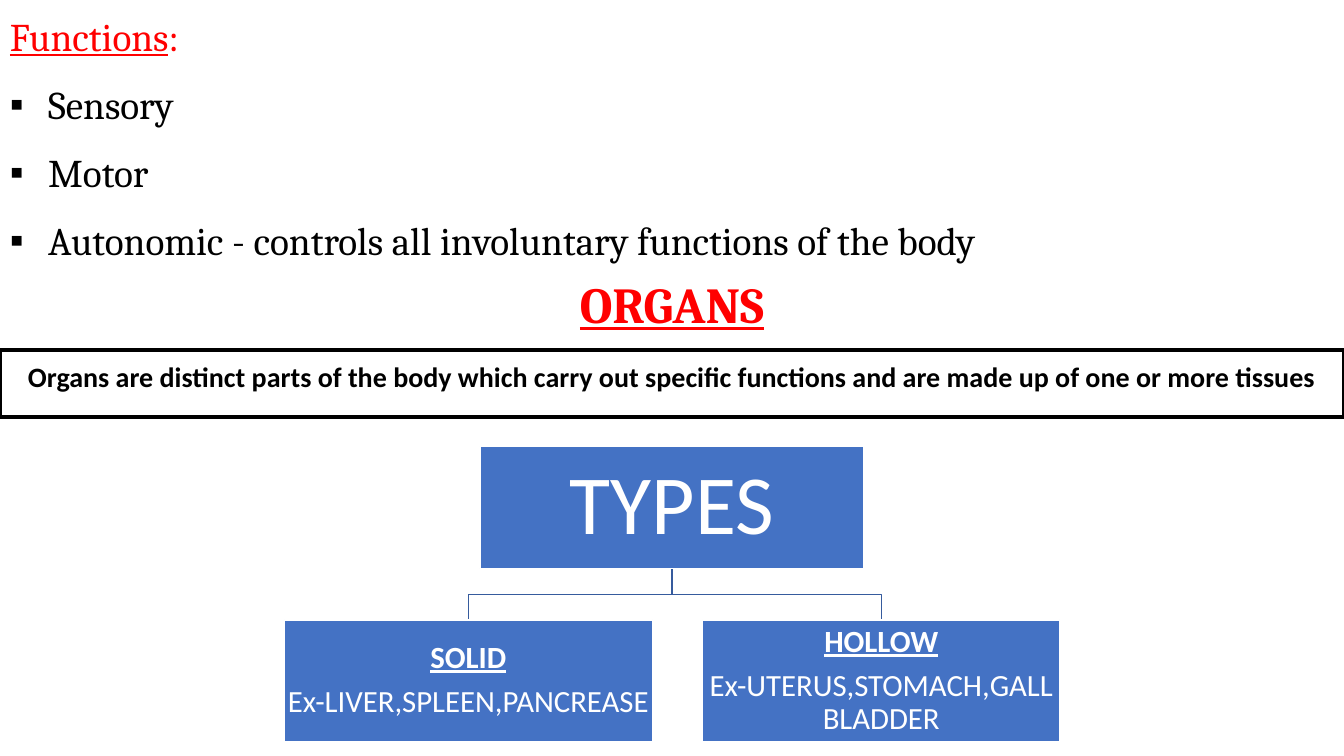
import dataclasses
import typing

import pptx
import pptx.dml.color
import pptx.enum.shapes
import pptx.enum.text
import pptx.oxml
import pptx.oxml.ns
import pptx.util

SLIDE_WIDTH = pptx.util.Inches(13.33)
SLIDE_HEIGHT = pptx.util.Inches(7.5)
BLACK, WHITE, RED, BLUE, DARK_BLUE = "000000", "FFFFFF", "FF0000", "4472C4", "365B9D"
CENTER = pptx.enum.text.PP_ALIGN.CENTER
BULLET_INDENT = pptx.util.Inches(0.38)


@dataclasses.dataclass(frozen=True)
class Area:
    """A rectangle in percent of the slide's width and height."""
    left: float
    top: float
    width: float
    height: float

    def place(self) -> tuple[int, int, int, int]:
        return (across(self.left), down(self.top), across(self.width), down(self.height))

    @property
    def middle(self) -> float:
        return self.left + self.width / 2

    @property
    def bottom(self) -> float:
        return self.top + self.height


@dataclasses.dataclass(frozen=True)
class Line:
    """One paragraph and its look."""
    text: str
    size: float
    font: str
    color: str
    bold: bool = False
    underline: bool = False
    spacing: float = 1.15
    after: float = 10
    centered: bool = True
    bullet: bool = False
    tab: bool = False


@dataclasses.dataclass(frozen=True)
class Box:
    """A filled box of the types chart."""
    area: Area
    inset: float
    lines: tuple[Line, ...]


def across(share: float) -> int:
    return round(SLIDE_WIDTH * share / 100)


def down(share: float) -> int:
    return round(SLIDE_HEIGHT * share / 100)


def rgb(color: str) -> pptx.dml.color.RGBColor:
    return pptx.dml.color.RGBColor.from_string(color)


def add_bullet(paragraph: typing.Any, tab: bool) -> None:
    properties = paragraph._p.get_or_add_pPr()
    properties.set("marL", str(BULLET_INDENT))
    properties.set("indent", str(-BULLET_INDENT))
    namespace = pptx.oxml.ns.nsdecls("a")
    elements = [f'<a:buFont {namespace} typeface="Arial"/>', f'<a:buChar {namespace} char="▪"/>']
    if tab:
        elements.append(f'<a:tabLst {namespace}><a:tab pos="{pptx.util.Inches(1)}" algn="l"/></a:tabLst>')
    for element in elements:
        properties.append(pptx.oxml.parse_xml(element))


def write_lines(frame: typing.Any, lines: typing.Sequence[Line]) -> None:
    frame.word_wrap = True
    for index, line in enumerate(lines):
        paragraph = frame.add_paragraph() if index else frame.paragraphs[0]
        if line.bullet:
            add_bullet(paragraph, line.tab)
        paragraph.text = line.text
        paragraph.alignment = CENTER if line.centered else pptx.enum.text.PP_ALIGN.LEFT
        paragraph.line_spacing = line.spacing
        paragraph.space_after = pptx.util.Pt(line.after)
        font = paragraph.font
        font.name, font.size = line.font, pptx.util.Pt(line.size)
        font.bold, font.underline = line.bold, line.underline
        font.color.rgb = rgb(line.color)


def add_text(slide: typing.Any, area: Area, lines: typing.Sequence[Line]) -> typing.Any:
    frame = slide.shapes.add_textbox(*area.place()).text_frame
    write_lines(frame, lines)
    frame.auto_size = pptx.enum.text.MSO_AUTO_SIZE.SHAPE_TO_FIT_TEXT
    return frame


def add_rectangle(slide: typing.Any, area: Area, fill: str, outline: str, weight: float,
                  lines: typing.Sequence[Line]) -> typing.Any:
    shape = slide.shapes.add_shape(pptx.enum.shapes.MSO_SHAPE.RECTANGLE, *area.place())
    shape.shadow.inherit = False
    shape.fill.solid()
    shape.fill.fore_color.rgb = rgb(fill)
    shape.line.color.rgb = rgb(outline)
    shape.line.width = pptx.util.Pt(weight)
    write_lines(shape.text_frame, lines)
    return shape.text_frame


def add_box(slide: typing.Any, box: Box) -> None:
    frame = add_rectangle(slide, box.area, BLUE, WHITE, 1, box.lines)
    frame.vertical_anchor = pptx.enum.text.MSO_ANCHOR.MIDDLE
    inset = pptx.util.Inches(box.inset)
    frame.margin_left = frame.margin_top = frame.margin_right = frame.margin_bottom = inset


def add_branch(slide: typing.Any, parent: Area, child: Area) -> None:
    """Draw an elbow from the foot of the parent to the head of the child."""
    halfway = down((parent.bottom + child.top) / 2)
    start, end = across(parent.middle), across(child.middle)
    builder = slide.shapes.build_freeform(start, down(parent.bottom))
    builder.add_line_segments([(start, halfway), (end, halfway), (end, down(child.top))], close=False)
    shape = builder.convert_to_shape()
    shape.shadow.inherit = False
    shape.fill.background()
    shape.line.color.rgb = rgb(DARK_BLUE)
    shape.line.width = pptx.util.Pt(1)


def type_box(left: float, width: float, name: str, examples: str) -> Box:
    heading = Line(name, 22, "Calibri", WHITE, bold=True, underline=True, spacing=0.9, after=7.7)
    detail = Line(examples, 22, "Calibri", WHITE, spacing=0.9, after=0)
    return Box(Area(left, 82, width, 16.13), 0.02, (heading, detail))


def function_line(text: str, tab: bool = True) -> Line:
    return Line(text, 28, "Cambria", BLACK, centered=False, bullet=True, tab=tab)


FUNCTIONS = (
    Line("Functions", 28, "Cambria", RED, underline=True, centered=False),
    function_line("Sensory"),
    function_line("Motor"),
    function_line("Autonomic - controls all involuntary functions of the body", tab=False),
)
DEFINITION = Line("Organs are distinct parts of the body which carry out specific functions "
                  "and are made up of one or more tissues", 20, "Calibri", BLACK, bold=True)
ORGANS = Line("ORGANS", 36, "Cambria", RED, bold=True, underline=True)
ROOT = Box(Area(35.71, 59.07, 28.58, 16.13), 0.04,
           (Line("TYPES", 60, "Calibri", WHITE, spacing=0.9, after=0),))
TYPES = (
    type_box(21.16, 27.38, "SOLID", "Ex-LIVER,SPLEEN,PANCREASE"),
    type_box(52.29, 26.56, "HOLLOW", "Ex-UTERUS,STOMACH,GALL BLADDER"),
)


def main() -> None:
    presentation = pptx.Presentation()
    presentation.slide_width, presentation.slide_height = SLIDE_WIDTH, SLIDE_HEIGHT
    slide = presentation.slides.add_slide(presentation.slide_layouts[6])

    functions = add_text(slide, Area(0, 0, 100, 35.33), FUNCTIONS)
    colon = functions.paragraphs[0].add_run()
    colon.text = ":"
    colon.font.underline = False

    definition = add_rectangle(slide, Area(0, 46.27, 100, 8.93), WHITE, BLACK, 3, [DEFINITION])
    definition.vertical_anchor = pptx.enum.text.MSO_ANCHOR.TOP
    add_text(slide, Area(24.68, 34.27, 50.64, 10), [ORGANS])

    for box in reversed(TYPES):
        add_branch(slide, ROOT.area, box.area)
    for box in (ROOT, *TYPES):
        add_box(slide, box)
    presentation.save("out.pptx")


if __name__ == "__main__":
    main()
